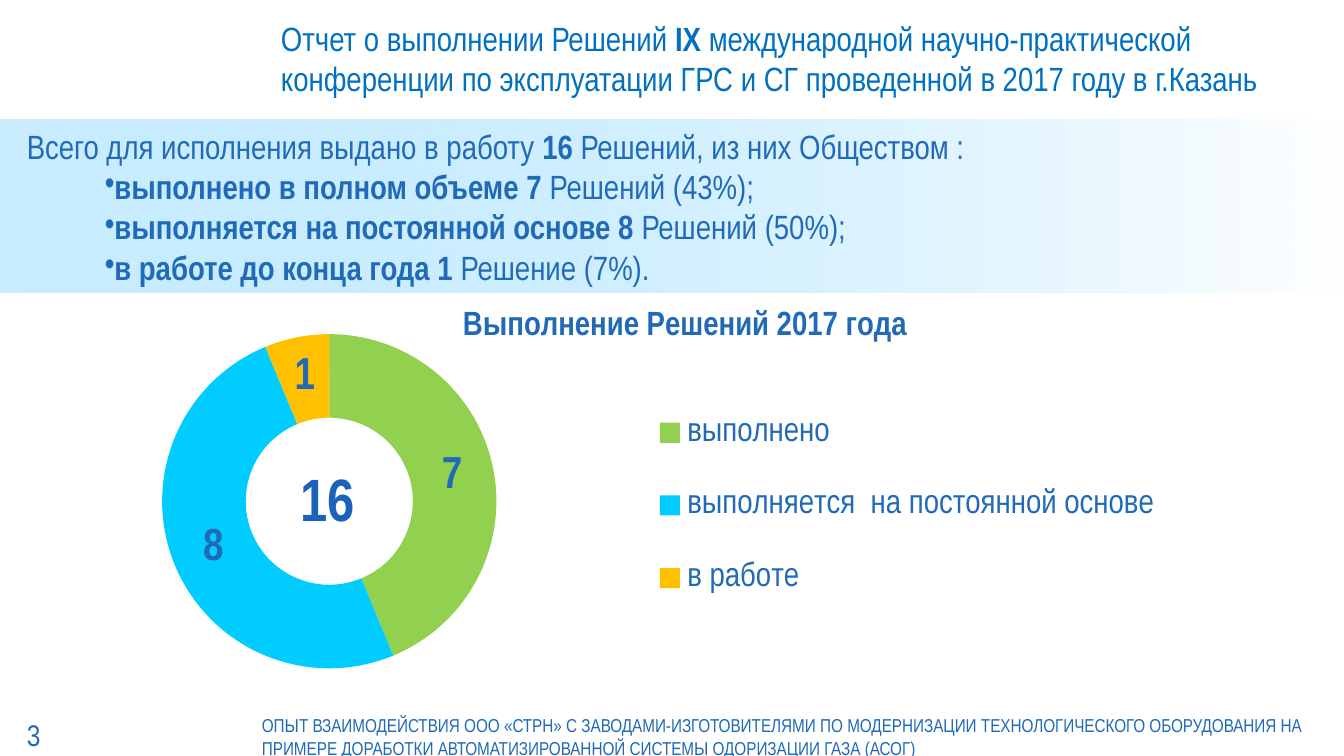
import pptx
import pptx.util
import pptx.dml.color
import pptx.chart.data
import pptx.enum.chart
import pptx.enum.shapes
import pptx.enum.text
import pptx.oxml
import pptx.oxml.ns

WIDE = 10
HIGH = WIDE * 9 / 16
FACE, BLUE = "Arial Narrow", "206AB7"
HEAD = [["Отчет о выполнении Решений ", "IX ",
         "международной научно-практической конференции по эксплуатации "
         "ГРС и СГ проведенной в 2017 году в г.Казань"]]
BODY = [
    ["Всего для исполнения выдано в работу ", "16", " Решений, из них Обществом :"],
    ["", "выполнено в полном объеме 7 ", "Решений (43%);"],
    ["", "выполняется на постоянной основе 8 ", "Решений (50%);"],
    ["", "в работе до конца года 1 ", "Решение (7%)."],
]
FOOT = [["ОПЫТ ВЗАИМОДЕЙСТВИЯ ООО «СТРН» С ЗАВОДАМИ-ИЗГОТОВИТЕЛЯМИ ПО МОДЕРНИЗАЦИИ "
         "ТЕХНОЛОГИЧЕСКОГО ОБОРУДОВАНИЯ НА ПРИМЕРЕ ДОРАБОТКИ АВТОМАТИЗИРОВАННОЙ "
         "СИСТЕМЫ ОДОРИЗАЦИИ ГАЗА (АСОГ)"]]
TITLE = "Выполнение Решений 2017 года"
PARTS = [("выполнено", 7, "92D050"),
         ("выполняется  на постоянной основе", 8, "00CCFF"),
         ("в работе", 1, "FFC000")]
STOPS = [("66CCFF", 35), ("FFFFFF", 82)]
RING = {"x": 0.11, "y": 0.1, "w": 0.27, "h": 0.81}
KEYS = {"x": 0.46, "y": 0.2, "w": 0.43, "h": 0.63}
NAME = {"x": 0.34, "y": 0.02}
BAND = (0, 0.89, WIDE, 1.29)
CHART = (0, 2.18, WIDE, 3.07)
TEXTS = [
    (HEAD, (2.09, 0, 7.91, 0.86), (0, 0, 0, 0), {"size": 18, "color": "0070C0"}),
    (FOOT, (1.85, 5.33, 8.15, 0.3), (0.1, 0.05, 0.1, 0.05), {"size": 10}),
    ([["3"]], (0, 5.31, 2.09, 0.31), (0.2, 0, 0, 0), {"size": 16}),
]


def inch(vals):
    return [pptx.util.Inches(v) for v in vals]


def tint(code):
    return pptx.dml.color.RGBColor.from_string(code)


def style(font, size, code=BLUE, bold=False):
    look = {"name": FACE, "size": pptx.util.Pt(size), "bold": bold}
    for key, val in look.items():
        setattr(font, key, val)
    font.color.rgb = tint(code)


def write(shape, paras, pads, size, color=BLUE, bold=False):
    frame = shape.text_frame
    frame.word_wrap = True
    frame.vertical_anchor = pptx.enum.text.MSO_ANCHOR.MIDDLE
    for side, pad in zip(("left", "top", "right", "bottom"), inch(pads)):
        setattr(frame, "margin_" + side, pad)
    for row, runs in enumerate(paras):
        para = frame.paragraphs[0] if row == 0 else frame.add_paragraph()
        para.alignment = pptx.enum.text.PP_ALIGN.LEFT
        for col, text in enumerate(runs):
            if text:
                run = para.add_run()
                run.text = text
                style(run.font, size, color, bold or col % 2 == 1)
    return frame


def place(elem, spot, area):
    for old in elem.findall(pptx.oxml.ns.qn("c:layout")):
        elem.remove(old)
    inner = '<c:layoutTarget val="inner"/>' if spot == 0 else ""
    modes = "".join(f'<c:{k}Mode val="edge"/>' for k in "xy")
    sizes = "".join(f'<c:{k} val="{v}"/>' for k, v in area.items())
    elem.insert(spot, pptx.oxml.parse_xml(
        f'<c:layout {pptx.oxml.ns.nsdecls("c")}><c:manualLayout>'
        f"{inner}{modes}{sizes}</c:manualLayout></c:layout>"))


def draw_band(slide):
    band = slide.shapes.add_shape(pptx.enum.shapes.MSO_SHAPE.RECTANGLE, *inch(BAND))
    band.shadow.inherit = False
    band.line.fill.background()
    band.fill.gradient()
    band.fill.gradient_angle = 0
    for stop, (code, _) in zip(band.fill.gradient_stops, STOPS):
        stop.color.rgb = tint(code)
    tags = band._element.spPr.iter(pptx.oxml.ns.qn("a:srgbClr"))
    for tag, (_, share) in zip(list(tags), STOPS):
        tag.append(pptx.oxml.parse_xml(
            f'<a:alpha {pptx.oxml.ns.nsdecls("a")} val="{share * 1000}"/>'))
    frame = write(band, BODY, (0, 0, 0, 0), 18)
    marks = (f'buFont {pptx.oxml.ns.nsdecls("a")} typeface="{FACE}"',
             f'buChar {pptx.oxml.ns.nsdecls("a")} char="•"')
    for row, para in enumerate(frame.paragraphs):
        props = para._p.get_or_add_pPr()
        props.set("marL", str(pptx.util.Inches(0.39)))
        props.set("indent", str(pptx.util.Inches(0.39 if row else -0.19)))
        for mark in marks if row else ():
            props.append(pptx.oxml.parse_xml(f"<a:{mark}/>"))


def draw_chart(slide):
    names, vals, codes = zip(*PARTS)
    data = pptx.chart.data.CategoryChartData()
    data.categories = names
    data.add_series(TITLE, vals)
    kind = pptx.enum.chart.XL_CHART_TYPE.DOUGHNUT
    chart = slide.shapes.add_chart(kind, *inch(CHART), data).chart
    style(chart.font, 18)
    chart.has_title = True
    head = chart.chart_title.text_frame
    head.text = TITLE
    style(head.paragraphs[0].runs[0].font, 18, bold=True)
    chart.has_legend = True
    chart.legend.position = pptx.enum.chart.XL_LEGEND_POSITION.RIGHT
    chart.legend.include_in_layout = False
    style(chart.legend.font, 18)
    plot = chart.plots[0]
    plot.vary_by_categories = True
    for num, code in enumerate(codes):
        fill = plot.series[0].points[num].format.fill
        fill.solid()
        fill.fore_color.rgb = tint(code)
    labels = plot.series[0].data_labels
    shows = {"show_value": True, "show_percentage": False,
             "show_category_name": False, "show_legend_key": False}
    for key, val in shows.items():
        setattr(labels, key, val)
    style(labels.font, 24, bold=True)
    place(chart._chartSpace.chart.plotArea, 0, RING)
    place(chart.legend._element, 1, KEYS)
    place(chart.chart_title._element, 1, NAME)


def main():
    deck = pptx.Presentation()
    deck.slide_width, deck.slide_height = inch((WIDE, HIGH))
    slide = deck.slides.add_slide(deck.slide_layouts[6])
    draw_band(slide)
    draw_chart(slide)
    for paras, area, pads, look in TEXTS:
        write(slide.shapes.add_textbox(*inch(area)), paras, pads, **look)
    total = slide.shapes.add_textbox(*inch((2.09, 3.38, 0.7, 0.64)))
    frame = write(total, [["16"]], (0.1, 0.05, 0.1, 0.05), 32, "1A62BA", True)
    frame.paragraphs[0].alignment = pptx.enum.text.PP_ALIGN.CENTER
    frame.auto_size = pptx.enum.text.MSO_AUTO_SIZE.SHAPE_TO_FIT_TEXT
    deck.save("out.pptx")


if __name__ == "__main__":
    main()
